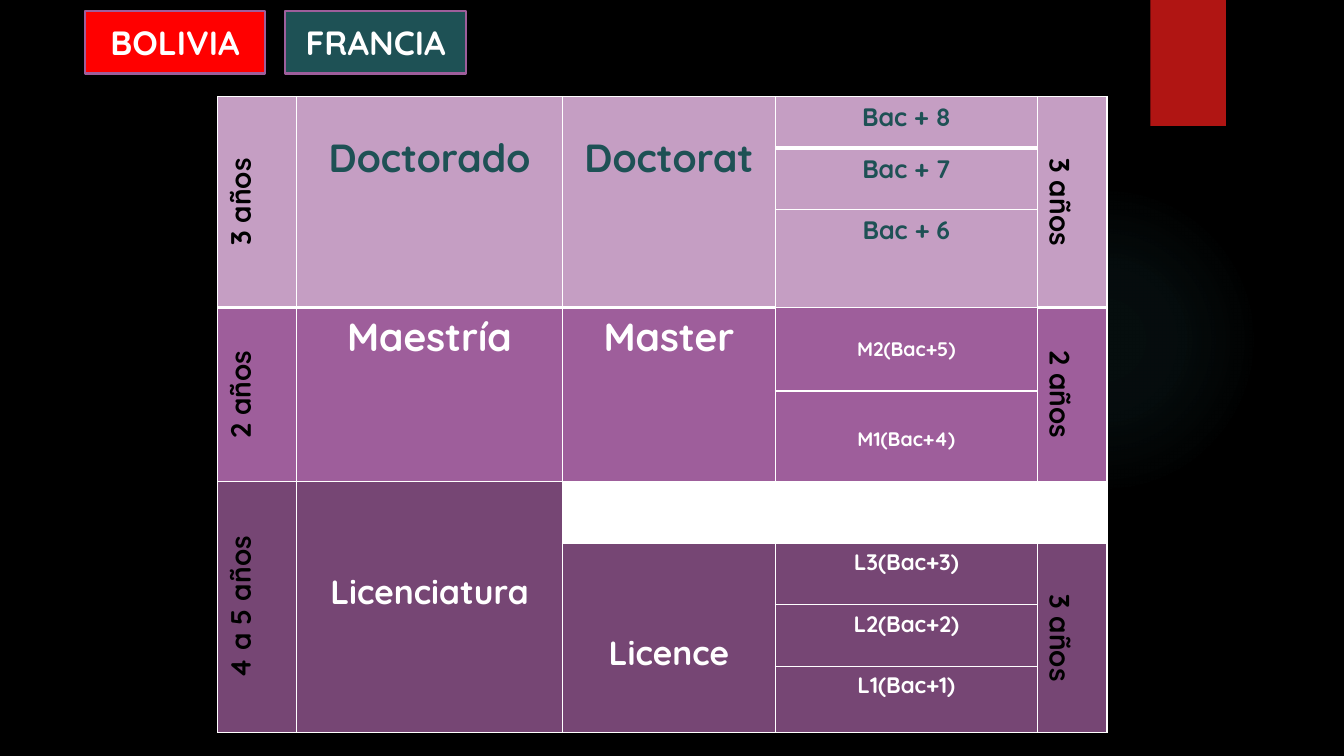
"""Build a slide comparing the university degrees of Bolivia and France."""
from lxml import etree
from pptx import Presentation
from pptx.dml.color import RGBColor
from pptx.enum import shapes, text
from pptx.oxml import ns
from pptx.util import Inches, Pt

BLACK = RGBColor(0x00, 0x00, 0x00)
WHITE = RGBColor(0xFF, 0xFF, 0xFF)
TEAL = RGBColor(0x1E, 0x51, 0x55)
RED = RGBColor(0xFF, 0x00, 0x00)
RIBBON_RED = RGBColor(0xB0, 0x15, 0x13)
LILAC = RGBColor(0xC5, 0x9E, 0xC3)
PURPLE = RGBColor(0x9E, 0x5E, 0x9B)
PLUM = RGBColor(0x76, 0x46, 0x74)
GLOW = "50B9C1"
GLOW_STOPS = [(0, 7), (36, 6), (69, 0)]
FONT = "Quicksand"

COUNTRIES = [("FRANCIA", 2.83, TEAL), ("BOLIVIA", 0.84, RED)]
COLUMNS = [0.78, 2.64, 2.11, 2.6, 0.69]
ROWS = [0.51, 0.61, 0.97, 0.83, 0.9, 0.61, 0.61, 0.61, 0.66]
UP, DOWN = "vert270", "vert"
PAD = 0.05

# row, column, rows spanned, wording, size, colour, fill, top margin, direction
DEGREES = [
    (0, 0, 3, "3 años", 20, BLACK, LILAC, PAD, UP),
    (0, 1, 3, "Doctorado", 28, TEAL, LILAC, 0.36, None),
    (0, 2, 3, "Doctorat", 28, TEAL, LILAC, 0.36, None),
    (0, 3, 1, "Bac + 8", 18, TEAL, LILAC, PAD, None),
    (0, 4, 3, "3 años", 20, BLACK, LILAC, PAD, DOWN),
    (1, 3, 1, "Bac + 7", 18, TEAL, LILAC, PAD, None),
    (2, 3, 1, "Bac + 6", 18, TEAL, LILAC, PAD, None),
    (3, 0, 2, "2 años", 20, BLACK, PURPLE, PAD, UP),
    (3, 1, 2, "Maestría", 28, WHITE, PURPLE, PAD, None),
    (3, 2, 2, "Master", 28, WHITE, PURPLE, PAD, None),
    (3, 3, 1, "M2(Bac+5)", 14, WHITE, PURPLE, 0.29, None),
    (3, 4, 2, "2 años", 20, BLACK, PURPLE, PAD, DOWN),
    (4, 3, 1, "M1(Bac+4)", 14, WHITE, PURPLE, 0.36, None),
    (5, 0, 4, "4 a 5 años", 20, BLACK, PLUM, PAD, UP),
    (5, 1, 4, "Licenciatura", 24, WHITE, PLUM, 0.88, None),
    (5, 2, 1, "", 18, WHITE, WHITE, PAD, None),
    (5, 3, 1, "", 18, WHITE, WHITE, PAD, None),
    (5, 4, 1, "", 18, WHITE, WHITE, PAD, None),
    (6, 2, 3, "Licence", 24, WHITE, PLUM, 0.88, None),
    (6, 3, 1, "L3(Bac+3)", 16, WHITE, PLUM, PAD, None),
    (6, 4, 3, "3 años", 20, BLACK, PLUM, PAD, DOWN),
    (7, 3, 1, "L2(Bac+2)", 16, WHITE, PLUM, PAD, None),
    (8, 3, 1, "L1(Bac+1)", 16, WHITE, PLUM, PAD, None),
]


def child(parent, tag, **attributes):
    """Append a DrawingML element to its parent."""
    return etree.SubElement(parent, ns.qn("a:" + tag), attributes)


def add_panel(slide, kind, left, top, width, height, fill):
    """Add a filled preset shape without outline or shadow."""
    panel = slide.shapes.add_shape(
        kind, Inches(left), Inches(top), Inches(width), Inches(height))
    panel.shadow.inherit = False
    panel.fill.solid()
    panel.fill.fore_color.rgb = fill
    panel.line.fill.background()
    return panel


def write(paragraph, wording, size, color):
    """Write centred bold text into a paragraph."""
    paragraph.text = wording
    paragraph.alignment = text.PP_ALIGN.CENTER
    paragraph.font.name = FONT
    paragraph.font.size = Pt(size)
    paragraph.font.bold = True
    paragraph.font.color.rgb = color


def add_glow(slide):
    """Add the faint round light behind the table."""
    glow = add_panel(slide, shapes.MSO_SHAPE.OVAL, 9.41, 1.83, 3.08, 3.08, TEAL)
    solid = glow.element.spPr.find(ns.qn("a:solidFill"))
    gradient = etree.Element(ns.qn("a:gradFill"))
    stops = child(gradient, "gsLst")
    for position, opacity in GLOW_STOPS:
        stop = child(stops, "gs", pos=str(position * 1000))
        child(child(stop, "srgbClr", val=GLOW), "alpha", val=str(opacity * 1000))
    center = child(gradient, "path", path="circle")
    child(center, "fillToRect", l="50000", t="50000", r="50000", b="50000")
    glow.element.spPr.replace(solid, gradient)


def set_borders(cell, top, bottom):
    """Draw white borders, with the given widths above and below."""
    properties = cell._tc.get_or_add_tcPr()
    widths = [("lnL", 1), ("lnR", 1), ("lnT", top), ("lnB", bottom)]
    for index, (side, width) in enumerate(widths):
        border = etree.Element(ns.qn("a:" + side), w=str(Pt(width)))
        child(child(border, "solidFill"), "srgbClr", val=str(WHITE))
        properties.insert(index, border)


def add_degrees(slide):
    """Add the table of degrees and their lengths."""
    table = slide.shapes.add_table(
        len(ROWS), len(COLUMNS), Inches(2.16), Inches(0.96),
        Inches(sum(COLUMNS)), Inches(sum(ROWS))).table
    table.first_row = table.horz_banding = False
    for column, width in zip(table.columns, COLUMNS):
        column.width = Inches(width)
    for row, height in zip(table.rows, ROWS):
        row.height = Inches(height)

    header_ends = {(span, col) for row, col, span, *_ in DEGREES if row == 0}
    for row, col, span, wording, size, color, fill, margin, direction in DEGREES:
        degree = table.cell(row, col)
        if span > 1:
            degree.merge(table.cell(row + span - 1, col))
        for part in range(row, row + span):
            block = table.cell(part, col)
            block.fill.solid()
            block.fill.fore_color.rgb = fill
        write(degree.text_frame.paragraphs[0], wording, size, color)
        degree.margin_top = Inches(margin)
        if direction:
            degree._tc.get_or_add_tcPr().set("vert", direction)
        set_borders(degree, 3 if (row, col) in header_ends else 1,
                    3 if row == 0 else 1)


def add_country(slide, name, left, fill):
    """Add a country label above the table."""
    label = add_panel(slide, shapes.MSO_SHAPE.RECTANGLE, left, 0.11, 1.79, 0.62, fill)
    label.line.color.rgb = PURPLE
    label.line.width = Pt(1.5)
    label.text_frame.vertical_anchor = text.MSO_ANCHOR.MIDDLE
    write(label.text_frame.paragraphs[0], name, 24, WHITE)


def main():
    """Assemble and save the slide."""
    deck = Presentation()
    deck.slide_width, deck.slide_height = Inches(13.33), Inches(7.5)
    slide = deck.slides.add_slide(deck.slide_layouts[6])
    slide.background.fill.solid()
    slide.background.fill.fore_color.rgb = BLACK
    add_glow(slide)
    add_panel(slide, shapes.MSO_SHAPE.RECTANGLE, 11.41, 0, 0.75, 1.25, RIBBON_RED)
    add_degrees(slide)
    for country in COUNTRIES:
        add_country(slide, *country)
    deck.save("out.pptx")


if __name__ == "__main__":
    main()
